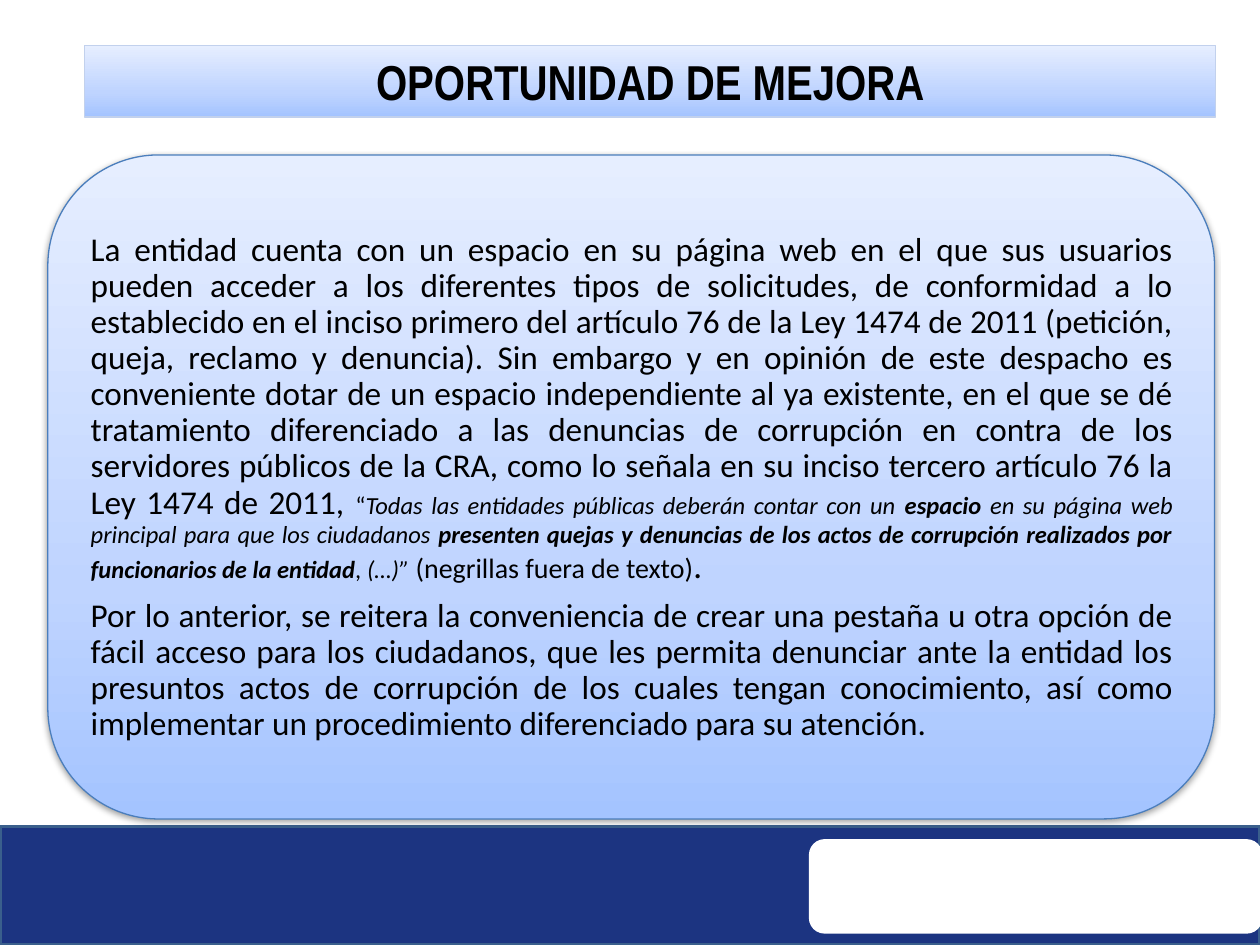
from dataclasses import dataclass

from lxml.etree import SubElement
from pptx import Presentation
from pptx.dml.color import RGBColor
from pptx.enum.shapes import MSO_SHAPE
from pptx.enum.text import MSO_ANCHOR, MSO_AUTO_SIZE, PP_ALIGN
from pptx.oxml.ns import qn
from pptx.util import Inches, Pt


@dataclass(frozen=True)
class Theme:
    title_font: str = "Arial Narrow"
    body_font: str = "Calibri"
    title_size: int = 28
    body_size: int = 19
    large_size: int = 20
    note_size: int = 16
    quote_size: int = 14
    text: str = "000000"
    white: str = "FFFFFF"
    band: str = "1C3481"
    band_line: str = "3A5F8C"
    title_line: str = "C2D1ED"
    panel_line: str = "4B7EBC"
    gradient: tuple = ((0, "A4C4FF"), (35, "BFD4FF"), (100, "E6EEFF"))


class SlideBuilder:
    def __init__(self, s, theme):
        self.s = s
        self.theme = theme

    def set_all(self, obj, values):
        for name, value in values.items():
            setattr(obj, name, value)

    def place(self, sp, box):
        names = ("left", "top", "width", "height")
        self.set_all(sp, dict(zip(names, map(Inches, box))))

    def outline(self, sp, color, width):
        sp.line.color.rgb = RGBColor.from_string(color)
        sp.line.width = Pt(width)

    def gradient(self, sp):
        sp.fill.gradient()
        grad = sp._element.spPr.find(qn("a:gradFill"))
        stops = grad.find(qn("a:gsLst"))
        for stop in list(stops):
            stops.remove(stop)
        for pos, color in self.theme.gradient:
            stop = SubElement(stops, qn("a:gs"), pos=str(pos * 1000))
            SubElement(stop, qn("a:srgbClr"), val=color)
        sp.fill.gradient_angle = 90

    def shadow(self, sp):
        effects = sp._element.spPr.find(qn("a:effectLst"))
        outer = SubElement(effects, qn("a:outerShdw"), blurRad=str(Pt(3.1)),
                           dist=str(Pt(1.6)), dir="5400000", rotWithShape="0")
        color = SubElement(outer, qn("a:srgbClr"), val="000000")
        SubElement(color, qn("a:alpha"), val="38000")

    def shape(self, kind, box, fill=None, line=None, width=0.75):
        sp = self.s.shapes.add_shape(kind, *map(Inches, box))
        sp.shadow.inherit = False
        if fill:
            sp.fill.solid()
            sp.fill.fore_color.rgb = RGBColor.from_string(fill)
        else:
            self.gradient(sp)
        if line:
            self.outline(sp, line, width)
        else:
            sp.line.fill.background()
        return sp

    def panel(self, box):
        sp = self.shape(MSO_SHAPE.ROUNDED_RECTANGLE, box, line=self.theme.panel_line)
        self.shadow(sp)

    def run(self, p, text, name, size, **style):
        r = p.add_run()
        r.text = text
        self.set_all(r.font, {"name": name, "size": Pt(size), **style})
        r.font.color.rgb = RGBColor.from_string(self.theme.text)

    def title(self, text, box):
        sp = self.s.shapes.title
        self.place(sp, box)
        self.gradient(sp)
        self.outline(sp, self.theme.title_line, 0.75)
        tf = sp.text_frame
        self.set_all(tf, {"auto_size": MSO_AUTO_SIZE.NONE, "word_wrap": True,
                          "vertical_anchor": MSO_ANCHOR.MIDDLE})
        p = tf.paragraphs[0]
        p.alignment = PP_ALIGN.CENTER
        self.run(p, text, self.theme.title_font, self.theme.title_size, bold=True)

    def body(self, paragraphs, box):
        sp = self.s.placeholders[1]
        self.s.shapes._spTree.append(sp._element)
        self.place(sp, box)
        tf = sp.text_frame
        margins = ("margin_left", "margin_top", "margin_right", "margin_bottom")
        self.set_all(tf, {"auto_size": MSO_AUTO_SIZE.NONE, "word_wrap": True,
                          "vertical_anchor": MSO_ANCHOR.MIDDLE,
                          **dict.fromkeys(margins, Inches(0.08))})
        for i, runs in enumerate(paragraphs):
            p = tf.add_paragraph() if i else tf.paragraphs[0]
            self.set_all(p, {"alignment": PP_ALIGN.JUSTIFY, "line_spacing": 0.9,
                             "space_before": Pt(0), "space_after": Pt(7)})
            pPr = p._p.get_or_add_pPr()
            pPr.set("marL", "0")
            pPr.set("indent", "0")
            SubElement(pPr, qn("a:buNone"))
            for text, size, style in runs:
                self.run(p, text, self.theme.body_font, size, **style)


def main():
    theme = Theme()
    prs = Presentation()
    prs.slide_width, prs.slide_height = Inches(10), Inches(7.5)
    b = SlideBuilder(prs.slides.add_slide(prs.slide_layouts[1]), theme)

    plain = {"bold": False, "italic": False}
    italic = {"bold": False, "italic": True}
    strong = {"bold": True, "italic": True}
    finding = [
        ("La entidad cuenta con un espacio en su página web en el que sus usuarios "
         "pueden acceder a los diferentes tipos de solicitudes, de conformidad a lo "
         "establecido en el inciso primero del artículo 76 de la Ley 1474 de 2011 "
         "(petición, queja, reclamo y denuncia). Sin embargo y en opinión de este "
         "despacho es conveniente dotar de un espacio independiente al ya existente, "
         "en el que se dé tratamiento diferenciado a las denuncias de corrupción en "
         "contra de los servidores públicos de la CRA, como lo señala en su inciso "
         "tercero artículo 76 la Ley 1474 de 2011,", theme.body_size, plain),
        (" ", theme.large_size, plain),
        ("“", theme.quote_size, plain),
        ("Todas las entidades públicas deberán contar con un ", theme.quote_size, italic),
        ("espacio", theme.quote_size, strong),
        (" en su página web principal para que los ciudadanos ", theme.quote_size, italic),
        ("presenten quejas y denuncias de los actos de corrupción realizados por "
         "funcionarios de la entidad", theme.quote_size, strong),
        (", (…)”", theme.quote_size, italic),
        (" (negrillas fuera de texto)", theme.note_size, plain),
        (".", theme.large_size, plain),
    ]
    proposal = [
        ("Por lo anterior, se reitera la conveniencia de crear una pestaña u otra "
         "opción de fácil acceso para los ciudadanos, que les permita denunciar ante "
         "la entidad los presuntos actos de corrupción de los cuales tengan "
         "conocimiento, así como implementar un procedimiento diferenciado para su "
         "atención.", theme.body_size, plain),
    ]

    b.shape(MSO_SHAPE.RECTANGLE, (0, 6.56, 10, 0.94), theme.band, theme.band_line, 2)
    b.shape(MSO_SHAPE.ROUNDED_RECTANGLE, (6.42, 6.66, 3.6, 0.75), theme.white)
    b.title("OPORTUNIDAD DE MEJORA", (0.67, 0.36, 8.98, 0.57))
    b.panel((0.38, 1.23, 9.26, 5.27))
    b.body([finding, proposal], (0.64, 1.49, 8.75, 4.76))
    prs.save("out.pptx")


if __name__ == "__main__":
    main()
